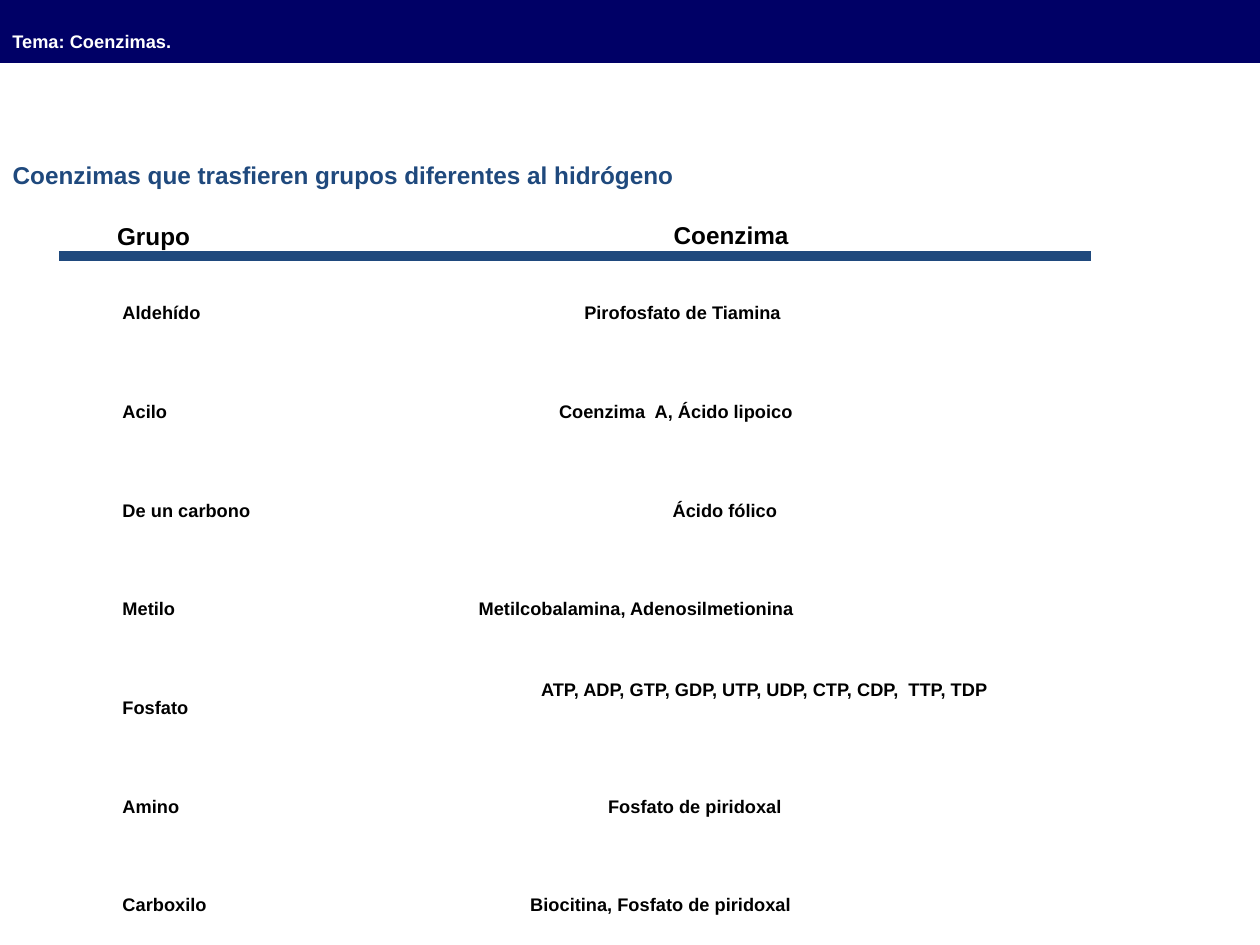
import pptx
import pptx.dml.color
import pptx.enum.shapes
import pptx.enum.text
import pptx.util
from pptx.util import Cm

COLORS = {"bar": "000066", "accent": "1F497D", "text": "000000", "light": "FFFFFF"}
ALIGN = pptx.enum.text.PP_ALIGN
ANCHOR = pptx.enum.text.MSO_ANCHOR
AUTO_SIZE = pptx.enum.text.MSO_AUTO_SIZE

HEADING_SIZE, BODY_SIZE = 24, 18
HEADING_HEIGHT, ROW_HEIGHT = 1.3, 1.02
FIRST_ROW_TOP, ROW_STEP = 5.57, 1.99
GROUP_LEFT, GROUP_WIDTH = 2.22, 5

# Group, coenzyme, left and width of the coenzyme label (cm)
ROWS = [
    ("Aldehído", "Pirofosfato de Tiamina", 11.53, 7.42),
    ("Acilo", "Coenzima  A, Ácido lipoico", 11.02, 8.71),
    ("De un carbono", "Ácido fólico", 13.31, 4.19),
    ("Metilo", "Metilcobalamina, Adenosilmetionina", 9.4, 11.56),
    ("Fosfato", "ATP, ADP, GTP, GDP, UTP, UDP, CTP, CDP,  TTP, TDP", 8.31, 14.2),
    ("Amino", "Fosfato de piridoxal", 12.01, 6.6),
    ("Carboxilo", "Biocitina, Fosfato de piridoxal", 10.44, 9.68),
]


def rgb(name):
    return pptx.dml.color.RGBColor.from_string(COLORS[name])


def write(shape, text, size, color="text", align=ALIGN.LEFT, **frame_format):
    """Fill a shape with one bold, slightly lowered line of text."""
    frame = shape.text_frame
    frame_values = {"word_wrap": True, "vertical_anchor": ANCHOR.TOP,
                    "auto_size": AUTO_SIZE.NONE, **frame_format}
    for name, value in frame_values.items():
        setattr(frame, name, value)
    paragraph = frame.paragraphs[0]
    paragraph.alignment = align
    run = paragraph.add_run()
    run.text = text
    font_values = {"name": "Arial", "size": pptx.util.Pt(size), "bold": True}
    for name, value in font_values.items():
        setattr(run.font, name, value)
    run.font.color.rgb = rgb(color)
    run.font._element.set("baseline", "-18000")


def add_label(slide, text, left, top, width, height=ROW_HEIGHT, size=BODY_SIZE,
              align=ALIGN.LEFT):
    label = slide.shapes.add_textbox(Cm(left), Cm(top), Cm(width), Cm(height))
    write(label, text, size, align=align)


def add_title(slide, text):
    title = slide.shapes.title
    place = {"left": 0, "top": 2.59, "width": 23.72, "height": HEADING_HEIGHT}
    for name, value in place.items():
        setattr(title, name, Cm(value))
    write(title, text, HEADING_SIZE, "accent")


def add_topic_bar(slide, text, width):
    bar = slide.shapes.add_shape(
        pptx.enum.shapes.MSO_SHAPE.RECTANGLE, 0, 0, width, Cm(1.27))
    bar.shadow.inherit = False
    bar.fill.solid()
    bar.fill.fore_color.rgb = rgb("bar")
    bar.line.fill.background()
    write(bar, text, BODY_SIZE, "light", vertical_anchor=ANCHOR.MIDDLE)


def add_rule(slide, left, right, y):
    rule = slide.shapes.add_connector(
        pptx.enum.shapes.MSO_CONNECTOR.STRAIGHT, Cm(left), Cm(y), Cm(right), Cm(y))
    rule.line.color.rgb = rgb("accent")
    rule.line.width = pptx.util.Pt(6)
    properties = rule._element.spPr
    properties.append(properties.makeelement(pptx.oxml.ns.qn("a:effectLst"), {}))


def add_rows(slide):
    for index, (group, coenzyme, left, width) in enumerate(ROWS):
        top = FIRST_ROW_TOP + index * ROW_STEP
        add_label(slide, group, GROUP_LEFT, top, GROUP_WIDTH)
        # The long phosphate list is centred and sits a little higher
        if group == "Fosfato":
            add_label(slide, coenzyme, left, top - 0.36, width, 1.78,
                      align=ALIGN.CENTER)
        else:
            add_label(slide, coenzyme, left, top, width)


def main():
    presentation = pptx.Presentation()
    presentation.slide_width, presentation.slide_height = Cm(25.4), Cm(19.05)
    slide = presentation.slides.add_slide(presentation.slide_layouts[5])

    # Topic and title
    add_title(slide, "Coenzimas que trasfieren grupos diferentes al hidrógeno")
    add_topic_bar(slide, "Tema: Coenzimas.", presentation.slide_width)

    # Column headings and the line under them
    add_rule(slide, 1.19, 22, 5.16)
    add_label(slide, "Grupo", 2.11, 3.83, 3.07, HEADING_HEIGHT, HEADING_SIZE)
    add_label(slide, "Coenzima", 13.33, 3.81, 4.55, HEADING_HEIGHT, HEADING_SIZE)

    # Groups with their coenzymes
    add_rows(slide)

    presentation.save("out.pptx")


if __name__ == "__main__":
    main()
